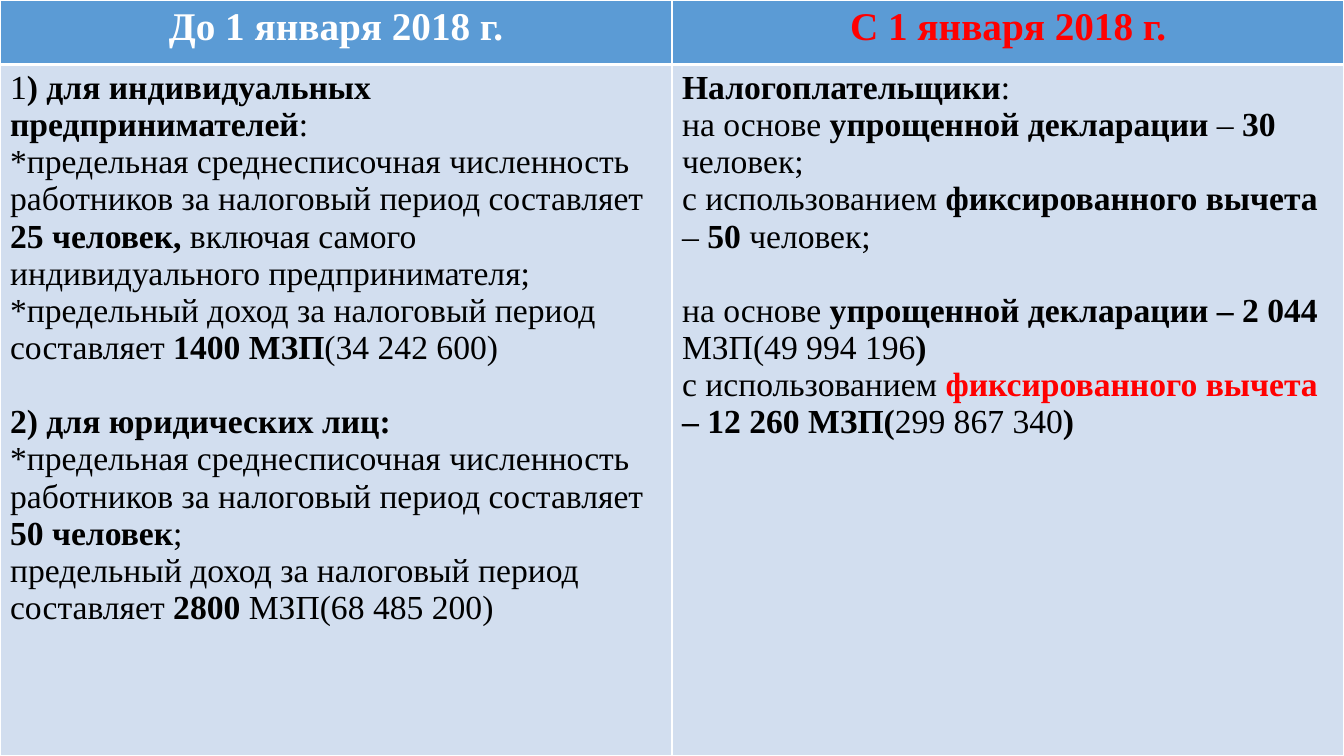
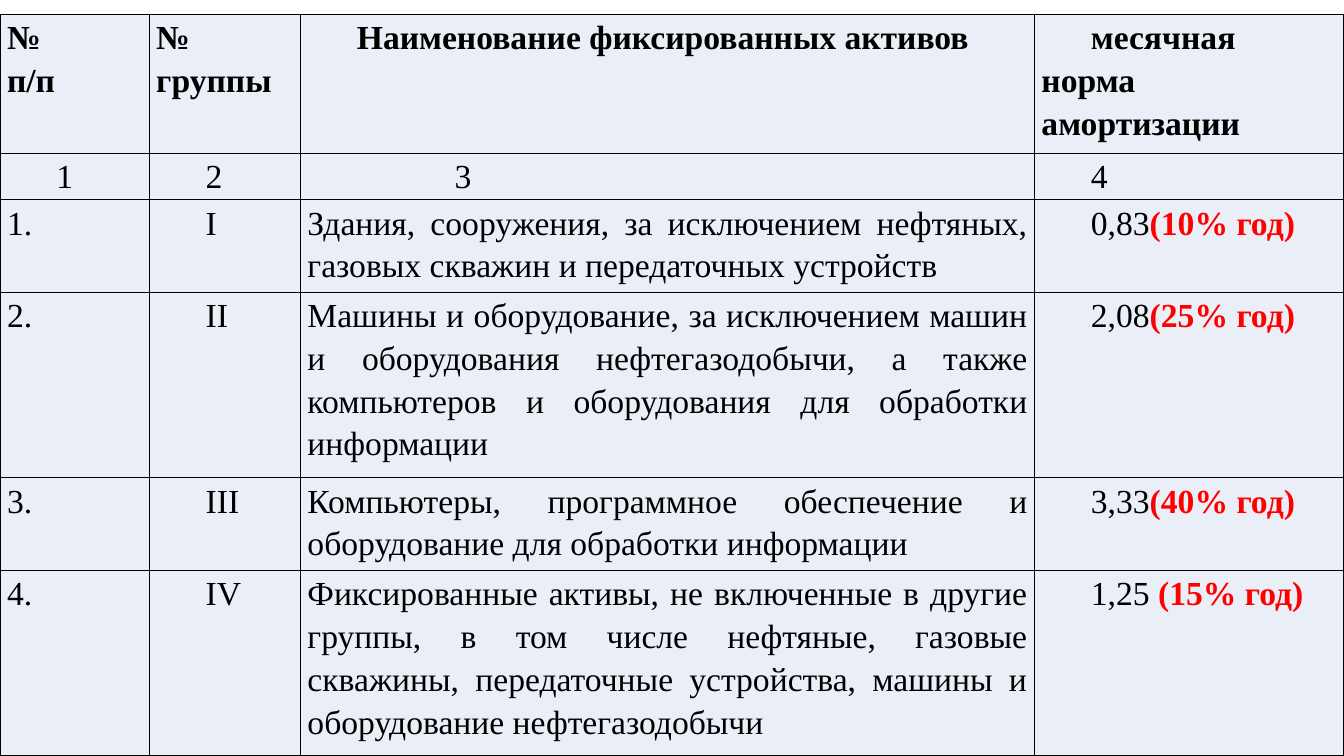
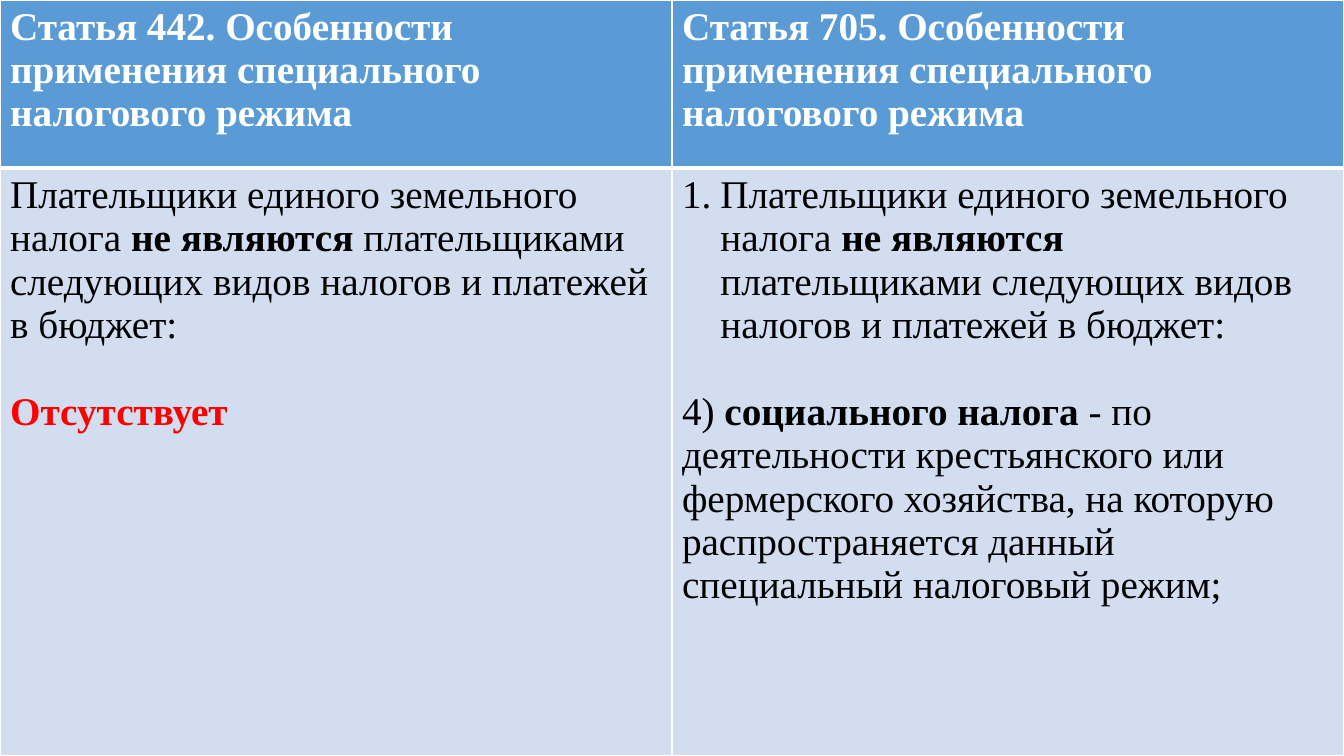
from dataclasses import dataclass

from lxml import etree
from pptx import Presentation
from pptx.dml.color import RGBColor
from pptx.enum.text import PP_ALIGN
from pptx.oxml.ns import qn
from pptx.util import Inches, Pt

CENTER, LEFT, JUSTIFY = PP_ALIGN.CENTER, PP_ALIGN.LEFT, PP_ALIGN.JUSTIFY
WHITE = RGBColor(0xFF, 0xFF, 0xFF)
BLACK = RGBColor(0x00, 0x00, 0x00)
RED = RGBColor(0xFF, 0x00, 0x00)
HEADER_BLUE = RGBColor(0x5B, 0x9B, 0xD5)
BODY_BLUE = RGBColor(0xD2, 0xDE, 0xEF)
PALE_BLUE = RGBColor(0xEA, 0xEF, 0xF7)

FONT = "Times New Roman"
WIDTH, HEIGHT = 13.33, 7.5
LINE_PITCH = 1.11
SIDES = ("L", "R", "T", "B")
FIRST_LINE = 0.49


@dataclass
class Bold:
    text: str
    color: RGBColor = None


@dataclass
class Line:
    """One paragraph: runs are plain strings or Bold; lengths are in inches."""
    runs: tuple
    align: PP_ALIGN = LEFT
    left: float = 0
    indent: float = 0
    spacing: float = None
    gap_before: bool = False
    numbered: bool = False


def line(*runs, **layout):
    return Line(runs, **layout)


def write_run(paragraph, text, size=24, color=BLACK, bold=False):
    run = paragraph.add_run()
    run.text = text
    font = run.font
    font.name, font.size, font.bold = FONT, Pt(size), bold
    font.color.rgb = color


class Deck:
    def __init__(self):
        self.presentation = Presentation()
        self.presentation.slide_width = Inches(WIDTH)
        self.presentation.slide_height = Inches(HEIGHT)
        self.slide = None

    def add_slide(self):
        self.slide = self.presentation.slides.add_slide(self.presentation.slide_layouts[6])

    def add_table(self, top, columns, rows):
        shape = self.slide.shapes.add_table(
            len(rows), len(columns), 0, Inches(top), Inches(sum(columns)), Inches(sum(rows)))
        table = shape.table
        table.first_row = table.horz_banding = False
        for column, width in zip(table.columns, columns):
            column.width = Inches(width)
        for row, height in zip(table.rows, rows):
            row.height = Inches(height)
        return table

    def set_borders(self, cell, color, **widths):
        """Draw all four sides 1 point wide, except the sides named in widths."""
        properties = cell._tc.get_or_add_tcPr()
        for side in SIDES:
            border = etree.SubElement(properties, qn(f"a:ln{side}"), w=str(Pt(widths.get(side, 1))))
            fill = etree.SubElement(border, qn("a:solidFill"))
            etree.SubElement(fill, qn("a:srgbClr"), val=str(color))

    def fill_cell(self, cell, lines, fill, size=24, color=BLACK):
        cell.fill.solid()
        cell.fill.fore_color.rgb = fill
        for index, content in enumerate(lines):
            frame = cell.text_frame
            paragraph = frame.add_paragraph() if index else frame.paragraphs[0]
            self.format_paragraph(paragraph, content, size)
            for run in content.runs:
                if isinstance(run, Bold):
                    write_run(paragraph, run.text, size=size, color=run.color or color, bold=True)
                else:
                    write_run(paragraph, run, size=size, color=color)

    def format_paragraph(self, paragraph, content, size):
        paragraph.alignment = content.align
        if content.spacing:
            paragraph.line_spacing = content.spacing
        if content.gap_before:
            paragraph.space_before = Pt(round(size * LINE_PITCH, 1))
        properties = paragraph._p.get_or_add_pPr()
        properties.set("marL", str(Inches(content.left)))
        properties.set("indent", str(Inches(content.indent)))
        if content.numbered:
            etree.SubElement(properties, qn("a:buAutoNum"), type="arabicPeriod")

    def add_comparison(self, header_height, headers, bodies, body_size):
        """Fill the slide with two columns, each a header over its text."""
        self.add_slide()
        table = self.add_table(0, [WIDTH / 2] * 2, [header_height, HEIGHT - header_height])
        for column, (header, body) in enumerate(zip(headers, bodies)):
            header_cell, body_cell = table.cell(0, column), table.cell(1, column)
            self.set_borders(header_cell, WHITE, B=3)
            self.set_borders(body_cell, WHITE, T=3)
            self.fill_cell(header_cell, [header], HEADER_BLUE, size=28, color=WHITE)
            self.fill_cell(body_cell, body, BODY_BLUE, size=body_size)

    def add_grid(self, top, columns, line_counts, line_height, rows):
        """Add a ruled table whose row heights follow their numbers of lines."""
        self.add_slide()
        table = self.add_table(top, columns, [count * line_height for count in line_counts])
        for row_index, row in enumerate(rows):
            for column_index, lines in enumerate(row):
                cell = table.cell(row_index, column_index)
                cell.margin_left = cell.margin_right = Inches(0.07)
                cell.margin_top = cell.margin_bottom = 0
                self.set_borders(cell, BLACK)
                self.fill_cell(cell, lines, PALE_BLUE)


def grid_line(*runs, indent=0):
    return line(*runs, align=JUSTIFY, indent=indent, spacing=1.15)


def asset_rows():
    header = [
        [grid_line(Bold("№")), grid_line(Bold("п/п"))],
        [grid_line(Bold("№ группы"))],
        [grid_line(Bold("Наименование фиксированных активов"), indent=FIRST_LINE)],
        [grid_line(Bold("месячная норма амортизации"), indent=FIRST_LINE)],
    ]
    indents = (FIRST_LINE, FIRST_LINE, 1.46, FIRST_LINE)
    numbers = [[grid_line(str(number), indent=indent)]
               for number, indent in enumerate(indents, 1)]
    assets = [
        ("I", "Здания, сооружения, за исключением нефтяных, газовых скважин и передаточных "
         "устройств", "0,83", "(10% год)"),
        ("II", "Машины и оборудование, за исключением машин и оборудования нефтегазодобычи, "
         "а также компьютеров и оборудования для обработки информации", "2,08", "(25% год)"),
        ("III", "Компьютеры, программное обеспечение и оборудование для обработки информации",
         "3,33", "(40% год)"),
        ("IV", "Фиксированные активы, не включенные в другие группы, в том числе нефтяные, "
         "газовые скважины, передаточные устройства, машины и оборудование нефтегазодобычи",
         "1,25 ", "(15% год)"),
    ]
    rows = [header, numbers]
    for number, (group, name, monthly, yearly) in enumerate(assets, 1):
        rows.append([
            [grid_line(f"{number}.")],
            [grid_line(group, indent=FIRST_LINE)],
            [grid_line(name, indent=-0.02)],
            [grid_line(monthly, Bold(yearly, RED), indent=FIRST_LINE)],
        ])
    return rows


def main():
    deck = Deck()

    headcount = "*предельная среднесписочная численность работников за налоговый период составляет "
    income = "предельный доход за налоговый период составляет "
    by_declaration = "на основе "
    by_deduction = "с использованием "
    deck.add_comparison(
        0.64,
        [line(Bold("До 1 января 2018 г."), align=CENTER),
         line(Bold("С 1 января 2018 г.", RED), align=CENTER)],
        [[line("1", Bold(") для индивидуальных предпринимателей"), ":"),
          line(headcount, Bold("25 человек,"),
               " включая самого индивидуального предпринимателя;"),
          line("*" + income, Bold("1400 МЗП"), "(34 242 600)"),
          line(Bold("2) для юридических лиц:"), gap_before=True),
          line(headcount, Bold("50 человек"), ";"),
          line(income, Bold("2800"), " МЗП(68 485 200)")],
         [line(Bold("Налогоплательщики"), ":"),
          line(by_declaration, Bold("упрощенной декларации "), "– ", Bold("30"), " человек;"),
          line(by_deduction, Bold("фиксированного вычета "), "– ", Bold("50"), " человек;"),
          line(by_declaration, Bold("упрощенной декларации – 2 044 "), "МЗП(49 994 196",
               Bold(")"), gap_before=True),
          line(by_deduction, Bold("фиксированного вычета ", RED), Bold("– 12 260 МЗП("),
               "299 867 340", Bold(")"))]],
        body_size=24)

    deck.add_grid(0.14, [1.48, 1.5, 7.28, 3.07], [3, 1, 2, 4, 2, 4], 0.46, asset_rows())

    feature = "Особенности применения специального налогового режима"
    payers = ("Плательщики единого земельного налога ", Bold("не являются "),
              "плательщиками следующих видов налогов и платежей в бюджет:")
    deck.add_comparison(
        1.67,
        [line(Bold(f"Статья {article}. {feature}")) for article in (442, 705)],
        [[line(*payers),
          line(Bold("Отсутствует", RED), gap_before=True)],
         [line(*payers, left=0.38, indent=-0.38, numbered=True),
          line("4) ", Bold("социального налога "),
               "- по деятельности крестьянского или фермерского хозяйства, на которую "
               "распространяется данный специальный налоговый режим;", gap_before=True)]],
        body_size=28)

    deck.presentation.save("out.pptx")


if __name__ == "__main__":
    main()
